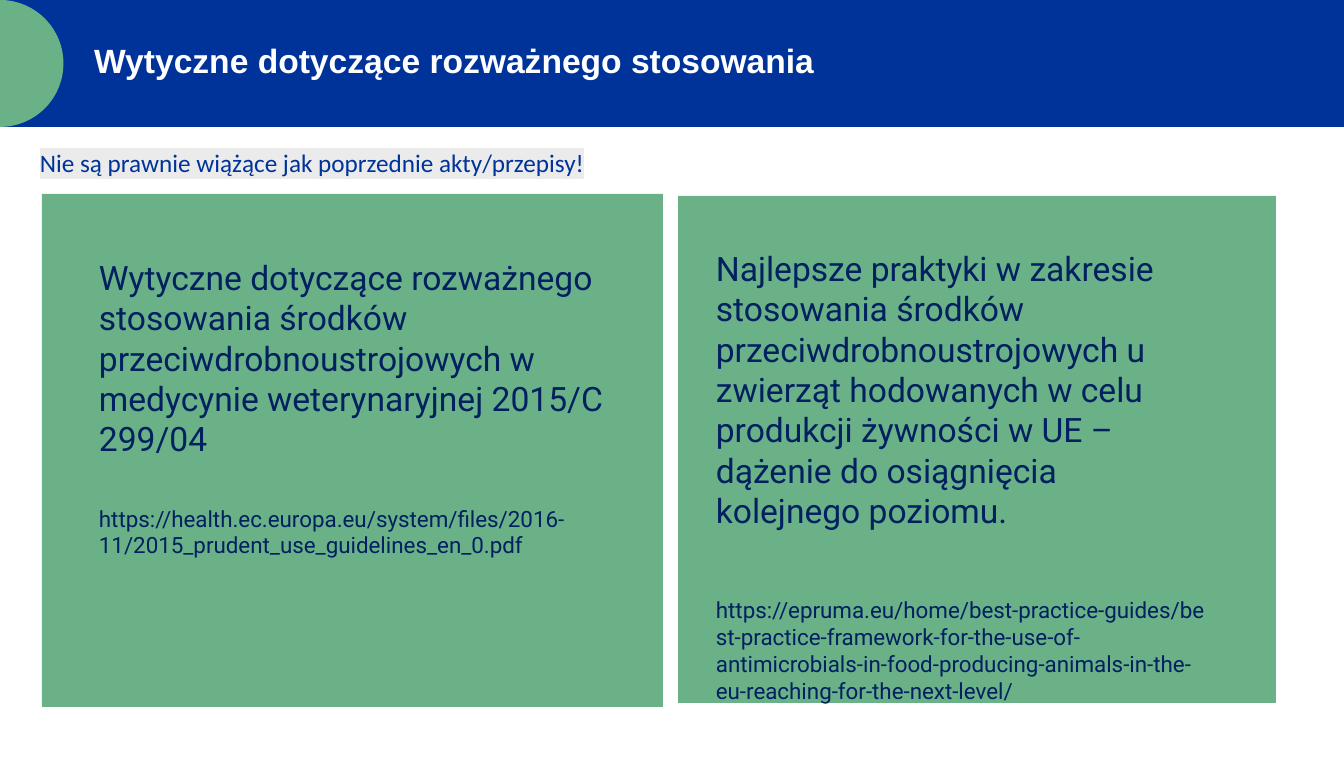
from math import cos, pi, sin

from lxml.etree import SubElement
from pptx import Presentation
from pptx.dml.color import RGBColor
from pptx.enum.shapes import MSO_SHAPE as Preset
from pptx.enum.text import MSO_ANCHOR as Anchor, MSO_AUTO_SIZE as AutoSize, PP_ALIGN as Align
from pptx.oxml.ns import qn
from pptx.util import Pt

SCALE = 914400 / 100.8
BLUE = RGBColor(0x00, 0x33, 0x99)
NAVY = RGBColor(0x00, 0x20, 0x60)
GREEN = RGBColor(0x6B, 0xB1, 0x88)
WHITE = RGBColor(0xFF, 0xFF, 0xFF)
PALE_GREY = RGBColor(0xEC, 0xEB, 0xEB)

CARDS = [
    ((42, 194, 621, 513), (89, 252, 530, 302), 33,
     "Wytyczne dotyczące rozważnego stosowania środków przeciwdrobnoustrojowych "
     "w medycynie weterynaryjnej 2015/C 299/04",
     "https://health.ec.europa.eu/system/files/2016-11/2015_prudent_use_guidelines_en_0.pdf"),
    ((678, 196, 598, 507), (706, 243, 512, 323), 28,
     "Najlepsze praktyki w zakresie stosowania środków przeciwdrobnoustrojowych u zwierząt "
     "hodowanych w celu produkcji żywności w UE – dążenie do osiągnięcia kolejnego poziomu.",
     " https://epruma.eu/home/best-practice-guides/best-practice-framework-for-the-use-of-"
     "antimicrobials-in-food-producing-animals-in-the-eu-reaching-for-the-next-level/"),
]


def px(length):
    """Turn pixels into EMU."""
    return round(length * SCALE)


def paint(shape, color):
    """Give a shape a flat fill with no line or shadow."""
    shape.shadow.inherit = False
    shape.fill.solid()
    shape.fill.fore_color.rgb = color
    shape.line.fill.background()
    return shape


def add_panel(page, place, color):
    """Add a plain rectangle."""
    return paint(page.shapes.add_shape(Preset.RECTANGLE, *map(px, place)), color)


def add_half_disc(page, radius, color, steps=60):
    """Add the right half of a disc at the top left corner."""
    angles = [pi * step / steps for step in range(1, steps + 1)]
    points = [(px(radius * sin(a)), px(radius * (1 - cos(a)))) for a in angles]
    builder = page.shapes.build_freeform(0, 0)
    builder.add_line_segments(points, close=True)
    return paint(builder.convert_to_shape(), color)


def write_text(para, text, *, size, font, color, bold=False, highlight=None, before=0):
    """Write one formatted run into a paragraph."""
    para.alignment = Align.LEFT
    if before:
        para.space_before = Pt(before)
    span = para.add_run()
    span.text = text
    span.font.size = Pt(size)
    span.font.bold = bold
    span.font.color.rgb = color
    if highlight is not None:
        mark = SubElement(span.font.fill._xPr, qn("a:highlight"))
        SubElement(mark, qn("a:srgbClr")).set("val", str(highlight))
    span.font.name = font


def add_box(page, place):
    """Add a wrapping text box and return its text frame."""
    frame = page.shapes.add_textbox(*map(px, place)).text_frame
    frame.word_wrap = True
    return frame


def add_header(page, title_text):
    """Lay the band and half disc behind the title."""
    title = page.shapes.title
    title.element.addprevious(add_panel(page, (0, 0, 1344, 127), BLUE).element)
    title.element.addprevious(add_half_disc(page, 63.5, GREEN).element)
    title.left, title.top, title.width, title.height = map(px, (84, 34, 1066, 53))
    frame = title.text_frame
    frame.auto_size = AutoSize.NONE
    frame.vertical_anchor = Anchor.MIDDLE
    write_text(frame.paragraphs[0], title_text, size=24, font="Arial", color=WHITE, bold=True)


def add_card(page, panel, place, gap, heading, link):
    """Add a green card with a guideline and its address."""
    add_panel(page, panel, GREEN)
    frame = add_box(page, place)
    write_text(frame.paragraphs[0], heading, size=24, font="Roboto", color=NAVY)
    write_text(frame.add_paragraph(), link, size=16, font="Roboto", color=NAVY, before=gap)


def main():
    """Build and save the slide."""
    deck = Presentation()
    deck.slide_width, deck.slide_height = px(1344), px(757)
    page = deck.slides.add_slide(deck.slide_layouts[5])
    add_header(page, "Wytyczne dotyczące rozważnego stosowania")
    for card in CARDS:
        add_card(page, *card)
    note = add_box(page, (30, 142, 1163, 40))
    write_text(note.paragraphs[0], "Nie są prawnie wiążące jak poprzednie akty/przepisy!",
               size=18, font="Calibri", color=BLUE, highlight=PALE_GREY)
    deck.save("out.pptx")


if __name__ == "__main__":
    main()
